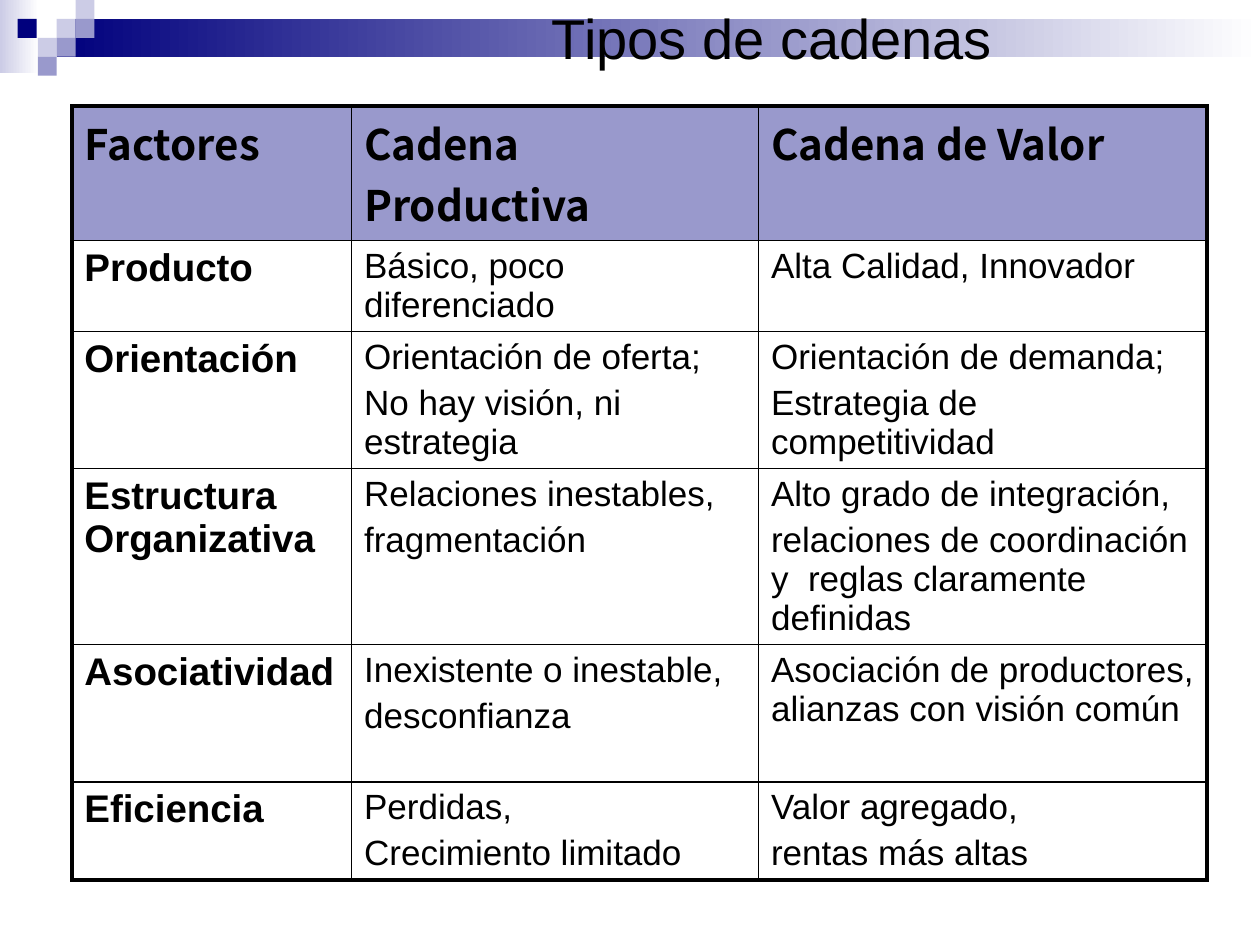
from lxml.etree import SubElement as Sub
from pptx import Presentation
from pptx.dml.color import RGBColor as RGB
from pptx.enum.shapes import MSO_SHAPE as Shape
from pptx.enum.text import MSO_ANCHOR as Anchor, PP_ALIGN as Align
from pptx.oxml.ns import qn
from pptx.util import Inches, Pt

NAVY = RGB(0x00, 0x00, 0x7D)
LILAC = RGB(0x99, 0x99, 0xCC)
PALE = RGB(0xCC, 0xCC, 0xE6)
WHITE = RGB(0xFF, 0xFF, 0xFF)
BLACK = RGB(0x00, 0x00, 0x00)

HEAD = {"name": "Noto Sans CJK JP", "size": Pt(24), "bold": True}
FACTOR = {"name": "Arial", "size": Pt(22), "bold": True}
BODY = {"name": "Arial", "size": Pt(20), "bold": False}
TITLE = {"name": "Arial", "size": Pt(32), "bold": False}


def write(par, text, style):
    run = par.add_run()
    run.text = text
    for key, val in style.items():
        setattr(run.font, key, val)
    run.font.color.rgb = BLACK


def border(cell, side, width):
    line = Sub(cell._tc.get_or_add_tcPr(), qn(f"a:ln{side}"), w=str(Pt(width)))
    fill = Sub(line, qn("a:solidFill"))
    Sub(fill, qn("a:srgbClr"), val=str(BLACK))


prs = Presentation()
prs.slide_width, prs.slide_height = Inches(10), Inches(7.5)
slide = prs.slides.add_slide(prs.slide_layouts[5])
shapes = slide.shapes

# Corner bars (two colours fade) and small squares
decor = [
    (0, 0, 0.31, 0.58, PALE, WHITE),
    (0.45, 0.15, 9.55, 0.3, NAVY, WHITE),
]
squares = [
    (0.45, 0.15, PALE), (0.6, 0, PALE), (0.6, 0.15, LILAC), (0.3, 0.3, PALE),
    (0.14, 0.15, NAVY), (0.45, 0.3, LILAC), (0.3, 0.45, LILAC),
]
decor += [(x, y, 0.15, 0.15, color, None) for x, y, color in squares]
for x, y, w, h, color, fade in decor:
    box = shapes.add_shape(Shape.RECTANGLE, Inches(x), Inches(y), Inches(w), Inches(h))
    box.shadow.inherit = False
    box.line.fill.background()
    if fade is None:
        box.fill.solid()
        box.fill.fore_color.rgb = color
    else:
        box.fill.gradient()
        box.fill.gradient_angle = 0
        for stop, tint in zip(box.fill.gradient_stops, (color, fade)):
            stop.color.rgb = tint

# Title, in front of the bars
title = shapes.title
title.left, title.top = Inches(4.28), Inches(0.05)
title.width, title.height = Inches(4.74), Inches(0.49)
frame = title.text_frame
frame.vertical_anchor = Anchor.MIDDLE
frame.paragraphs[0].alignment = Align.LEFT
write(frame.paragraphs[0], "Tipos de cadenas", TITLE)
shapes._spTree.append(title._element)

# Table: each line of a cell is a paragraph
rows = [
    ("Factores", "Cadena Productiva", "Cadena de Valor"),
    ("Producto", "Básico, poco diferenciado", "Alta Calidad, Innovador"),
    ("Orientación", "Orientación de oferta;\nNo hay visión, ni estrategia",
     "Orientación de demanda;\nEstrategia de competitividad"),
    ("Estructura Organizativa", "Relaciones inestables,\nfragmentación",
     "Alto grado de integración,\n"
     "relaciones de coordinación y  reglas claramente definidas"),
    ("Asociatividad", "Inexistente o inestable,\ndesconfianza",
     "Asociación de productores, alianzas con visión común"),
    ("Eficiencia", "Perdidas,\nCrecimiento limitado",
     "Valor agregado,\nrentas más altas"),
]
widths = [2.22, 3.23, 3.56]
heights = [1.07, 0.72, 1.09, 1.39, 1.09, 0.78]
table = shapes.add_table(len(rows), len(widths), Inches(0.57), Inches(0.84),
                         Inches(sum(widths)), Inches(sum(heights))).table
table.first_row = table.horz_banding = False
for col, width in zip(table.columns, widths):
    col.width = Inches(width)
for row, height in zip(table.rows, heights):
    row.height = Inches(height)

for r, texts in enumerate(rows):
    for c, text in enumerate(texts):
        cell = table.cell(r, c)
        # Thick lines on the outer edge only
        outer = {"L": c == 0, "R": c == len(widths) - 1,
                 "T": r == 0, "B": r == len(rows) - 1}
        for side, edge in outer.items():
            border(cell, side, 2.25 if edge else 1)
        if r == 0:
            cell.fill.solid()
            cell.fill.fore_color.rgb = LILAC
        else:
            cell.fill.background()
        style = HEAD if r == 0 else FACTOR if c == 0 else BODY
        frame = cell.text_frame
        for i, line in enumerate(text.split("\n")):
            par = frame.add_paragraph() if i else frame.paragraphs[0]
            if i:
                par.space_before = Pt(4)
            write(par, line, style)

prs.save("out.pptx")
